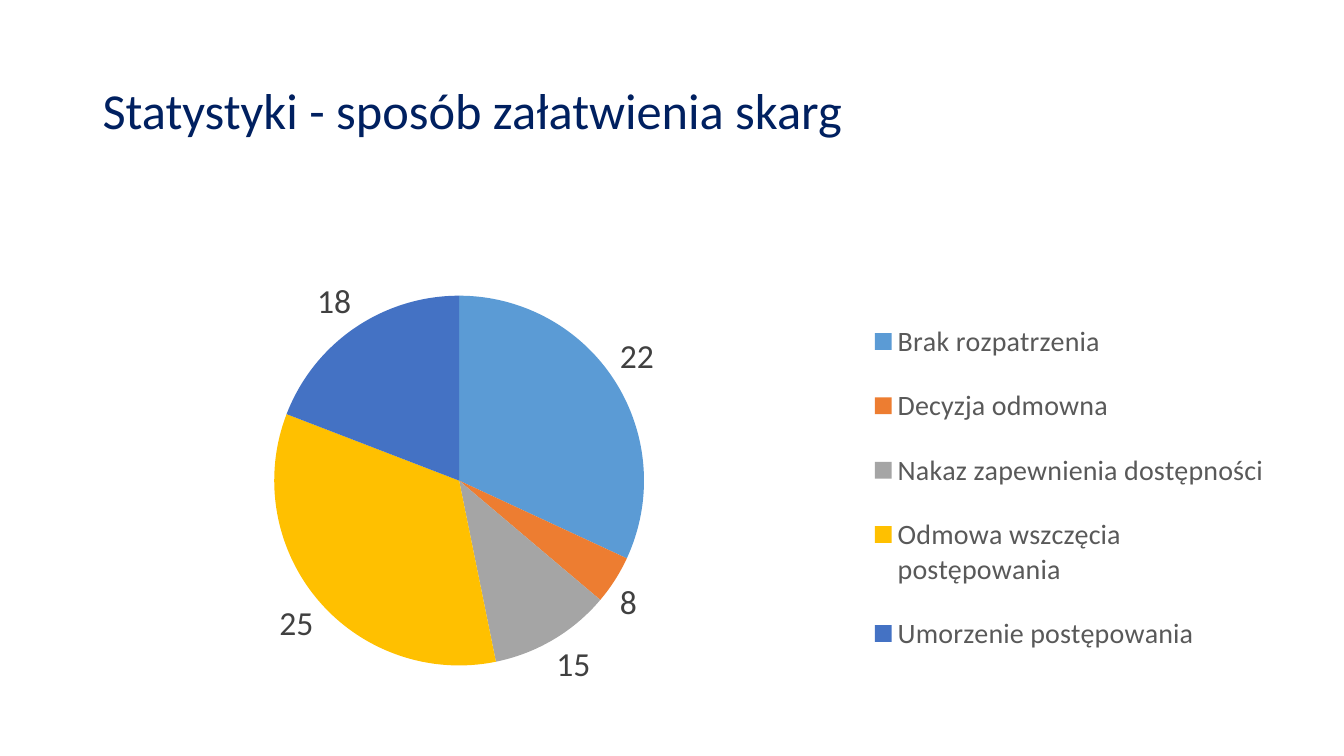
import pptx
import pptx.chart.data
import pptx.dml.color
import pptx.enum.chart
import pptx.enum.text
import pptx.oxml
import pptx.oxml.ns
import pptx.util
from pptx.util import Cm

RGBColor = pptx.dml.color.RGBColor
NAVY = RGBColor(0x00, 0x20, 0x60)
BLACK = RGBColor(0x00, 0x00, 0x00)
LABEL_GREY = RGBColor(0x40, 0x40, 0x40)
LEGEND_GREY = RGBColor(0x59, 0x59, 0x59)
BLUE = RGBColor(0x5B, 0x9B, 0xD5)
ORANGE = RGBColor(0xED, 0x7D, 0x31)
GREY = RGBColor(0xA5, 0xA5, 0xA5)
GOLD = RGBColor(0xFF, 0xC0, 0x00)
INDIGO = RGBColor(0x44, 0x72, 0xC4)

# Category, slice value, shown label, colour
OUTCOMES = [
    ("Brak rozpatrzenia", 15, "22", BLUE),
    ("Decyzja odmowna", 2, "8", ORANGE),
    ("Nakaz zapewnienia dostępności", 5, "15", GREY),
    ("Odmowa wszczęcia postępowania", 16, "25", GOLD),
    ("Umorzenie postępowania", 9, "18", INDIGO),
]


class SlideBuilder:
    """Holds the text style and the current slide."""

    font_name = "Calibri"

    def __init__(self, page):
        self.page = page

    def style(self, font, size, color):
        font.name = self.font_name
        font.size = pptx.util.Pt(size)
        font.color.rgb = color

    def title(self, text, left, top, width, height):
        box = self.page.shapes.title
        box.left, box.top, box.width, box.height = left, top, width, height
        frame = box.text_frame
        frame.word_wrap = True
        frame.auto_size = pptx.enum.text.MSO_AUTO_SIZE.NONE
        frame.vertical_anchor = pptx.enum.text.MSO_ANCHOR.MIDDLE
        para = frame.paragraphs[0]
        para.alignment = pptx.enum.text.PP_ALIGN.LEFT
        para.line_spacing = 0.9
        span = para.add_run()
        span.text = text
        self.style(span.font, 36, NAVY)

    def manual_layout(self, x, y, w, h, inner=False):
        target = '<c:layoutTarget val="inner"/>' if inner else ""
        return pptx.oxml.parse_xml(
            f'<c:layout {pptx.oxml.ns.nsdecls("c")}><c:manualLayout>{target}'
            '<c:xMode val="edge"/><c:yMode val="edge"/>'
            f'<c:x val="{x}"/><c:y val="{y}"/><c:w val="{w}"/><c:h val="{h}"/>'
            '</c:manualLayout></c:layout>')

    def pie(self, outcomes, left, top, width, height):
        data = pptx.chart.data.CategoryChartData()
        data.categories = [name for name, *_ in outcomes]
        data.add_series("Series 1", [value for _, value, *_ in outcomes])
        chart = self.page.shapes.add_chart(
            pptx.enum.chart.XL_CHART_TYPE.PIE,
            left, top, width, height, data).chart
        chart.has_title = False
        self.style(chart.font, 10, BLACK)

        # Slices and their labels
        plot = chart.plots[0]
        plot.vary_by_categories = True
        outside = pptx.enum.chart.XL_LABEL_POSITION.OUTSIDE_END
        labels = plot.series[0].data_labels
        labels.show_value = True
        labels.position = outside
        self.style(labels.font, 24, LABEL_GREY)
        for index, (_, _, shown, color) in enumerate(outcomes):
            point = plot.series[0].points[index]
            point.format.fill.solid()
            point.format.fill.fore_color.rgb = color
            span = point.data_label.text_frame.paragraphs[0].add_run()
            span.text = shown
            self.style(span.font, 24, LABEL_GREY)
            point.data_label.position = outside

        # Legend
        chart.has_legend = True
        legend = chart.legend
        legend.position = pptx.enum.chart.XL_LEGEND_POSITION.RIGHT
        legend.include_in_layout = False
        self.style(legend.font, 20, LEGEND_GREY)

        # Placement inside the chart frame
        layout_tag = pptx.oxml.ns.qn("c:layout")
        plot_area = chart._chartSpace.chart.plotArea
        for holder in (plot_area, legend._element):
            for old in holder.findall(layout_tag):
                holder.remove(old)
        plot_area.insert(0, self.manual_layout(0.18, 0.09, 0.3, 0.81, True))
        legend._element.insert(1, self.manual_layout(0.66, 0.09, 0.33, 0.84))


def main():
    deck = pptx.Presentation()
    deck.slide_width, deck.slide_height = Cm(33.87), Cm(19.05)
    builder = SlideBuilder(deck.slides.add_slide(deck.slide_layouts[5]))
    builder.title("Statystyki - sposób załatwienia skarg",
                  Cm(2.33), Cm(1.01), Cm(29.21), Cm(3.68))
    builder.pie(OUTCOMES, Cm(1.32), Cm(6.38), Cm(31.06), Cm(11.58))
    deck.save("out.pptx")


if __name__ == "__main__":
    main()
